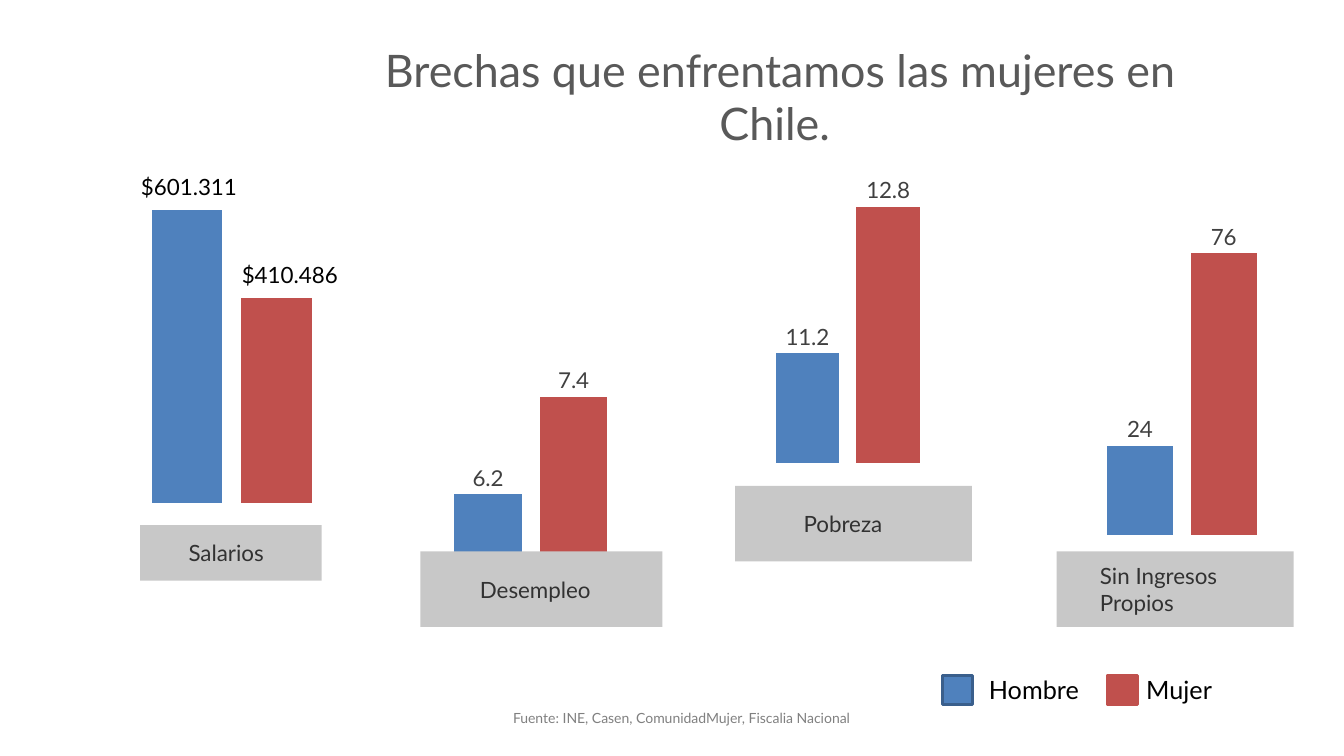
import pptx
import pptx.chart.data
import pptx.dml.color
import pptx.enum.chart
import pptx.enum.shapes
import pptx.enum.text
import pptx.util
from lxml import etree
from pptx.util import Inches, Pt

RGBColor = pptx.dml.color.RGBColor
BLUE = RGBColor(0x4F, 0x81, 0xBD)
BLUE_EDGE = RGBColor(0x3A, 0x5F, 0x8C)
RED = RGBColor(0xC0, 0x50, 0x4D)
GREY = RGBColor(0xC8, 0xC8, 0xC8)
BLACK = RGBColor(0, 0, 0)
CAPTION_INK = RGBColor(0x32, 0x32, 0x32)
VALUE_INK = RGBColor(0x40, 0x40, 0x40)
TITLE_INK = RGBColor(0x59, 0x59, 0x59)
SOURCE_INK = RGBColor(0x80, 0x80, 0x80)
FONT = "Lato"
FULL_PLOT = (0.02, 0.02, 0.96, 0.96)

# Chart box, plot area (fractions), values, axis range, value labels shown,
# caption, caption box, caption indent
GAPS = [
    ((3.71, 3.64, 3.11, 1.87), FULL_PLOT, (6.2, 7.4), (5.5, 7.67), True,
     "Desempleo", (4.17, 5.47, 2.4, 0.75), 0.59),
    ((7, 1.66, 3.3, 3.15), (0, 0.066, 0.854, 0.867), (11.2, 12.8), (10, 13), True,
     "Pobreza", (7.29, 4.82, 2.35, 0.75), 0.68),
    ((9.83, 2.16, 3.35, 3.59), (0.129, 0.058, 0.871, 0.819), (24, 76), (0, 80), True,
     "Sin Ingresos Propios", (10.48, 5.47, 2.35, 0.75), 0.43),
    ((0.68, 1.43, 3.24, 3.63), FULL_PLOT, (100, 70), (0, 120), False,
     "Salarios", (1.39, 5.21, 1.8, 0.55), 0.48),
]


def inches(box):
    return [Inches(v) for v in box]


def set_font(font, size, color):
    font.name, font.size = FONT, Pt(size)
    font.color.rgb = color


def add_text(s, box, text, size, color):
    tf = s.shapes.add_textbox(*inches(box)).text_frame
    tf.word_wrap = True
    p = tf.paragraphs[0]
    p.text = text
    set_font(p.font, size, color)


def add_box(s, box, fill, edge=None):
    sp = s.shapes.add_shape(pptx.enum.shapes.MSO_SHAPE.RECTANGLE, *inches(box))
    sp.shadow.inherit = False
    sp.fill.solid()
    sp.fill.fore_color.rgb = fill
    if edge is None:
        sp.line.fill.background()
    else:
        sp.line.color.rgb = edge
        sp.line.width = Pt(2)
    return sp


def set_plot_area(chart, fractions):
    plot_area = chart.plots[0]._element.getparent()
    ns = plot_area.nsmap["c"]
    for old in plot_area.findall(f"{{{ns}}}layout"):
        plot_area.remove(old)
    layout = etree.Element(f"{{{ns}}}layout")
    manual = etree.SubElement(layout, f"{{{ns}}}manualLayout")
    settings = [("layoutTarget", "inner"), ("xMode", "edge"), ("yMode", "edge")]
    settings += zip("xywh", fractions)
    for tag, value in settings:
        etree.SubElement(manual, f"{{{ns}}}{tag}", val=str(value))
    plot_area.insert(0, layout)


def add_gap_chart(s, box, plot_box, values, limits, labelled):
    data = pptx.chart.data.CategoryChartData()
    data.categories = ["1"]
    for name, value in zip(("Hombre", "Mujer"), values):
        data.add_series(name, [value])
    kind = pptx.enum.chart.XL_CHART_TYPE.COLUMN_CLUSTERED
    chart = s.shapes.add_chart(kind, *inches(box), data).chart
    chart.has_title = chart.has_legend = False
    set_font(chart.font, 16, BLACK)
    axis = chart.value_axis
    axis.minimum_scale, axis.maximum_scale = limits
    axis.has_major_gridlines = False
    axis.visible = chart.category_axis.visible = False
    plot = chart.plots[0]
    plot.gap_width, plot.overlap = 219, -27
    plot.vary_by_categories = False
    for series, color in zip(plot.series, (BLUE, RED)):
        series.format.fill.solid()
        series.format.fill.fore_color.rgb = color
        if labelled:
            labels = series.data_labels
            labels.show_value = True
            labels.position = pptx.enum.chart.XL_LABEL_POSITION.OUTSIDE_END
            set_font(labels.font, 16, VALUE_INK)
    set_plot_area(chart, plot_box)


def add_caption(s, box, text, indent):
    tf = add_box(s, box, GREY).text_frame
    tf.word_wrap = True
    tf.vertical_anchor = pptx.enum.text.MSO_ANCHOR.MIDDLE
    tf.margin_left, tf.margin_right = Inches(indent), Inches(0.12)
    tf.margin_top = tf.margin_bottom = Inches(0.08)
    p = tf.paragraphs[0]
    p.text = text
    p.alignment = pptx.enum.text.PP_ALIGN.LEFT
    set_font(p.font, 16, CAPTION_INK)


def add_title(s, box):
    title = s.shapes.title
    title.left, title.top, title.width, title.height = inches(box)
    tf = title.text_frame
    tf.word_wrap = True
    tf.auto_size = pptx.enum.text.MSO_AUTO_SIZE.NONE
    tf.vertical_anchor = pptx.enum.text.MSO_ANCHOR.TOP
    p = tf.paragraphs[0]
    p.text = "Brechas que enfrentamos las mujeres en Chile. "
    p.alignment = pptx.enum.text.PP_ALIGN.CENTER
    set_font(p.font, 32, TITLE_INK)


def add_legend(s, left, top):
    entries = [("Hombre", BLUE, BLUE_EDGE, 0, 0.36), ("Mujer", RED, RED, 1.63, 1.92)]
    for text, fill, edge, key_x, text_x in entries:
        add_box(s, (left + key_x, top + 0.06, 0.3, 0.29), fill, edge)
        add_text(s, (left + text_x, top, 1.89, 0.4), text, 18, BLACK)


def add_salary_values(s, left, top):
    for text, dx, dy in (("$601.311", 0, 0), ("$410.486", 1, 0.87)):
        add_text(s, (left + dx, top + dy, 1.8, 0.37), text, 16, BLACK)


def main():
    prs = pptx.Presentation()
    prs.slide_width, prs.slide_height = Inches(13.33), Inches(7.5)
    s = prs.slides.add_slide(prs.slide_layouts[5])
    add_title(s, (3.53, 0.37, 8.42, 1.18))

    # Four gaps, each a chart above its caption
    for box, plot_box, values, limits, labelled, text, caption_box, indent in GAPS:
        add_gap_chart(s, box, plot_box, values, limits, labelled)
        add_caption(s, caption_box, text, indent)
    add_salary_values(s, 1.3, 1.67)

    # Source and legend
    add_text(s, (4.99, 6.99, 4.8, 0.27),
             "Fuente: INE, Casen, ComunidadMujer, Fiscalia Nacional", 10, SOURCE_INK)
    add_legend(s, 9.35, 6.64)
    prs.save("out.pptx")


if __name__ == "__main__":
    main()
